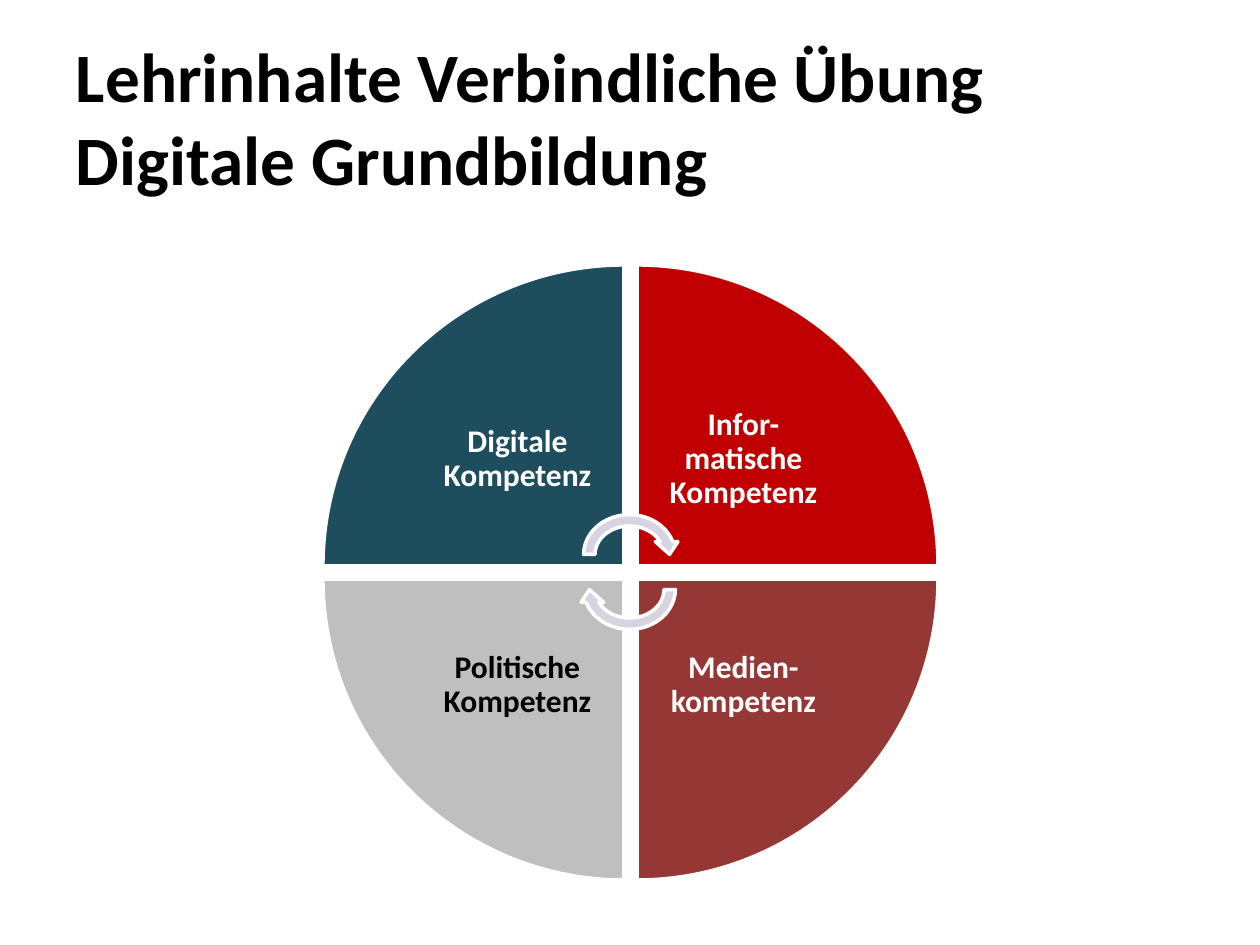
from dataclasses import dataclass

from pptx import Presentation
from pptx.dml.color import RGBColor
from pptx.enum.shapes import MSO_SHAPE
from pptx.enum.text import MSO_ANCHOR, MSO_AUTO_SIZE, PP_ALIGN
from pptx.util import Pt

PIE_WEDGE = MSO_SHAPE.PIE_WEDGE
CIRCULAR_ARROW = MSO_SHAPE.CIRCULAR_ARROW
MIDDLE = MSO_ANCHOR.MIDDLE
NO_AUTOFIT = MSO_AUTO_SIZE.NONE
LEFT = PP_ALIGN.LEFT
CENTER = PP_ALIGN.CENTER


@dataclass(frozen=True)
class Theme:
    font: str = "Calibri"
    title_size: float = 39.6
    label_size: float = 18
    line_width: float = 2
    black: str = "000000"
    white: str = "FFFFFF"
    teal: str = "1E4E5E"
    red: str = "C00000"
    maroon: str = "953735"
    grey: str = "BFBFBF"
    arrow: str = "D8D3E0"


theme = Theme()


def px(*lengths):
    return [round(length * 914400 / 126) for length in lengths]


def write_text(shape, text, *, size, color, align, inset, line_spacing=1.0):
    frame = shape.text_frame
    frame.word_wrap = True
    frame.auto_size = NO_AUTOFIT
    frame.vertical_anchor = MIDDLE
    frame.margin_left, frame.margin_right = px(inset, inset)
    frame.text = text
    paragraph = frame.paragraphs[0]
    paragraph.alignment = align
    paragraph.line_spacing = line_spacing
    for run in paragraph.runs:
        run.font.name = theme.font
        run.font.size = Pt(size)
        run.font.bold = True
        run.font.color.rgb = RGBColor.from_string(color)


presentation = Presentation()
presentation.slide_width, presentation.slide_height = px(1260, 945)
slide = presentation.slides.add_slide(presentation.slide_layouts[5])

title = slide.shapes.title
title.left, title.top, title.width, title.height = px(63, 38, 1134, 157)
write_text(title, "Lehrinhalte Verbindliche Übung\vDigitale Grundbildung",
           size=theme.title_size, color=theme.black, align=LEFT, inset=13)

wheel_left, wheel_top = 323, 265
wedge_size, wedge_step, label_size = 301, 314, 213
quadrants = [
    ("Digitale Kompetenz", 0, 0, theme.teal, theme.white),
    ("Infor-matische Kompetenz", 1, 0, theme.red, theme.white),
    ("Medien-kompetenz", 1, 1, theme.maroon, theme.white),
    ("Politische Kompetenz", 0, 1, theme.grey, theme.black),
]

filled_shapes = []
for index, (text, column, row, fill, color) in enumerate(quadrants):
    left = wheel_left + column * wedge_step
    top = wheel_top + row * wedge_step
    wedge = slide.shapes.add_shape(PIE_WEDGE, *px(left, top, wedge_size, wedge_size))
    wedge.rotation = index * 90
    filled_shapes.append((wedge, fill))

    label_left = left + (1 - column) * (wedge_size - label_size)
    label_top = top + (1 - row) * (wedge_size - label_size)
    label = slide.shapes.add_textbox(*px(label_left, label_top, label_size, label_size))
    write_text(label, text, size=theme.label_size, color=color,
               align=CENTER, inset=18, line_spacing=0.9)

for top, rotation in [(509, 0), (544, 180)]:
    arrow = slide.shapes.add_shape(CIRCULAR_ARROW, *px(578, top, 103, 91))
    arrow.rotation = rotation
    filled_shapes.append((arrow, theme.arrow))

for shape, fill in filled_shapes:
    shape.shadow.inherit = False
    shape.fill.solid()
    shape.fill.fore_color.rgb = RGBColor.from_string(fill)
    shape.line.color.rgb = RGBColor.from_string(theme.white)
    shape.line.width = Pt(theme.line_width)

presentation.save("out.pptx")
